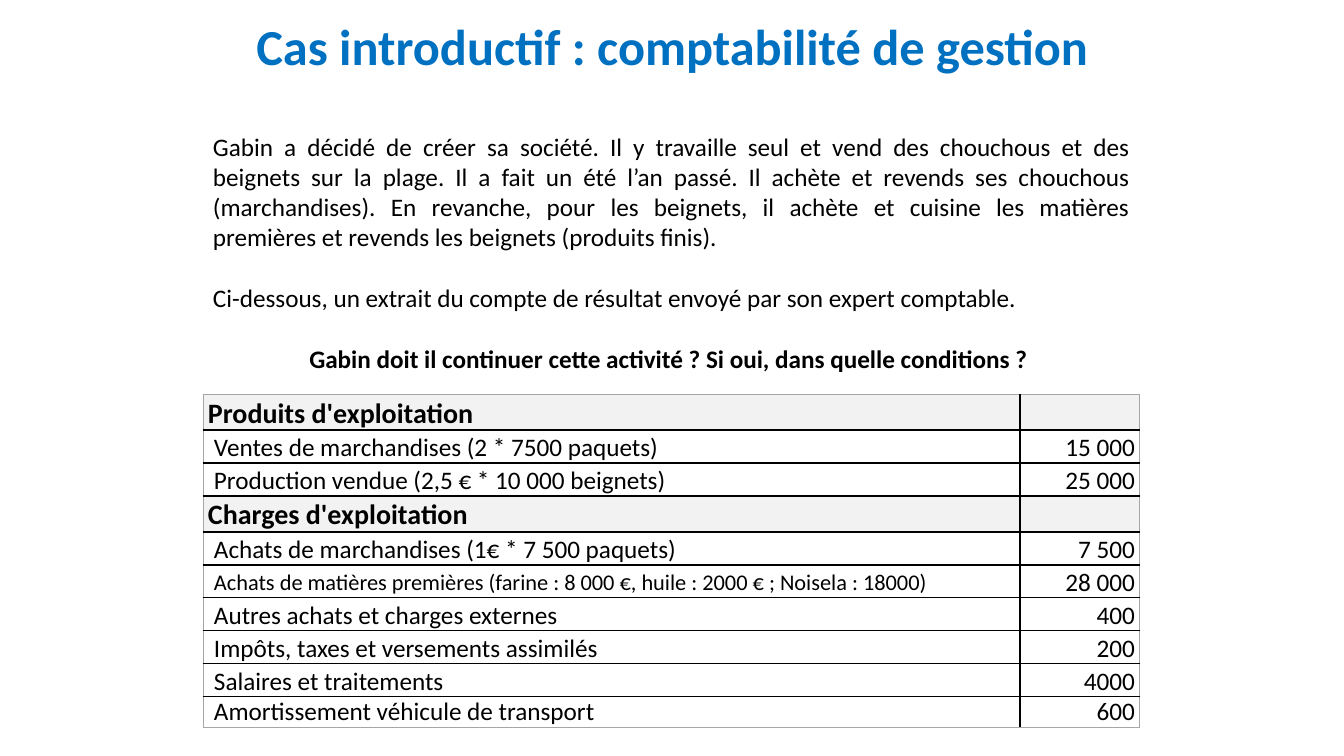
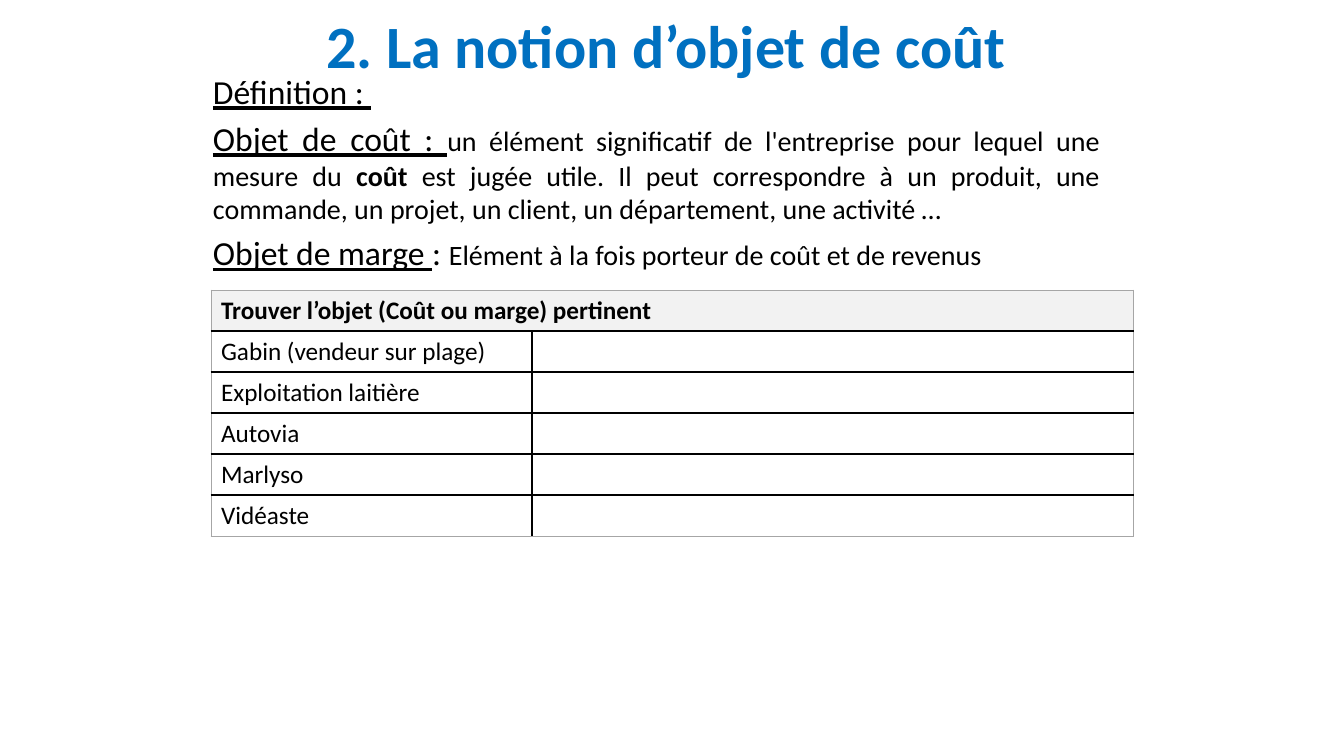
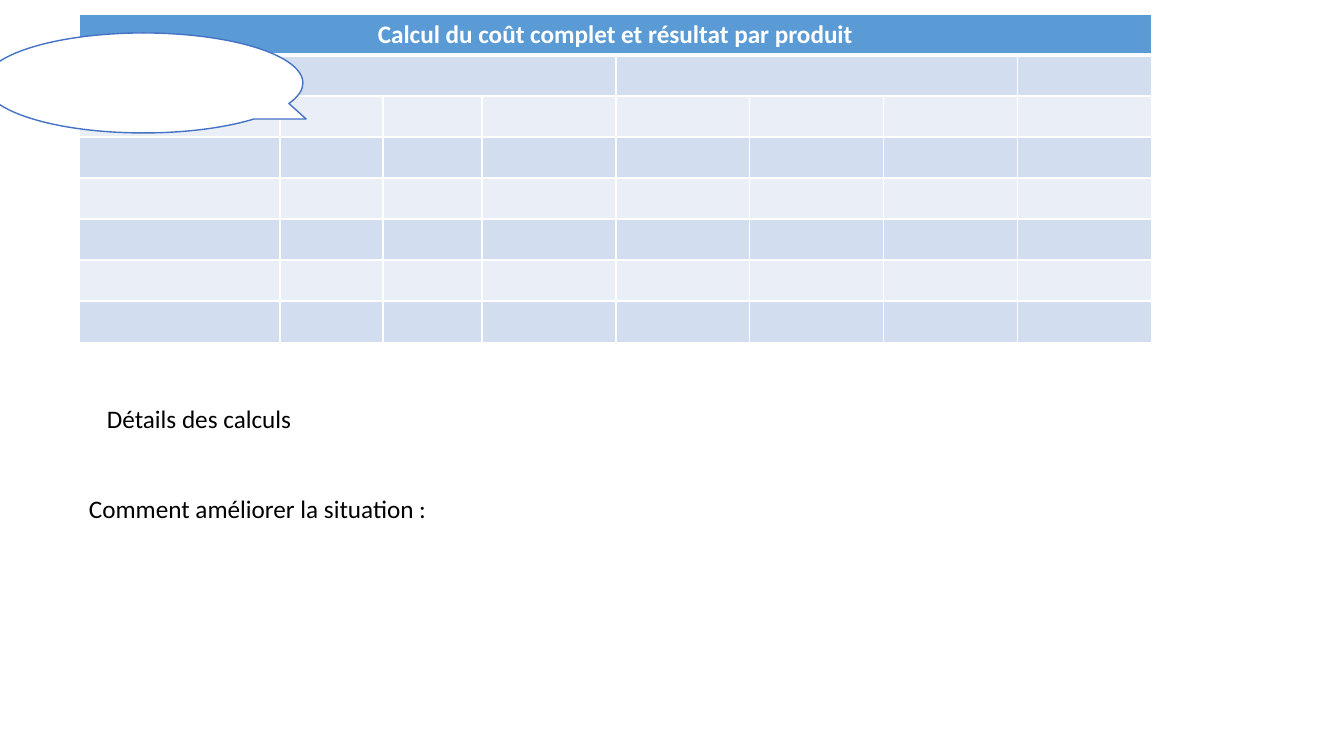
import pptx
import pptx.util
import pptx.dml.color
import pptx.enum.shapes
import pptx.enum.text
import pptx.oxml
import pptx.oxml.ns

RGB = pptx.dml.color.RGBColor
ALIGN = pptx.enum.text.PP_ALIGN
ANCHOR = pptx.enum.text.MSO_ANCHOR
Pt = pptx.util.Pt

# Shared look
FONT = "Calibri"
BLACK = RGB(0x00, 0x00, 0x00)
WHITE = RGB(0xFF, 0xFF, 0xFF)
TITLE_BLUE = RGB(0x00, 0x70, 0xC0)
HEAD_GREY = RGB(0xF2, 0xF2, 0xF2)
EDGE_GREY = RGB(0xA6, 0xA6, 0xA6)
HEAD_BLUE = RGB(0x5B, 0x9B, 0xD5)
BAND_DARK = RGB(0xD2, 0xDE, 0xEF)
BAND_LIGHT = RGB(0xEA, 0xEF, 0xF7)
CALLOUT_BLUE = RGB(0x44, 0x72, 0xC4)
SLIDE_W, SLIDE_H = 1344, 756
TITLE_BOX = (219, 0, 907, 90)
BODY_SIZE = 18

# Slide 1: introduction and income statement
INTRO_TITLE = ("Cas introductif : comptabilité de gestion", 36)
INTRO_BOX = (203, 126, 937, 285)
INTRO = [
    ([("Gabin a décidé de créer sa société. Il y travaille seul et vend des chouchous "
       "et des beignets sur la plage. Il a fait un été l’an passé. Il achète et revends "
       "ses chouchous (marchandises). En revanche, pour les beignets, il achète et "
       "cuisine les matières premières et revends les beignets (produits finis). ", {})],
     {"alignment": ALIGN.JUSTIFY}),
    ([("Ci-dessous, un extrait du compte de résultat envoyé par son expert comptable.",
       {})], {"space_before": Pt(22)}),
    ([("Gabin doit il continuer cette activité ? Si oui, dans quelle conditions ? ",
       {"bold": True})], {"alignment": ALIGN.CENTER, "space_before": Pt(22)}),
]
STATEMENT_AT = (203, 394)
STATEMENT_COLS = [817, 120]
STATEMENT_HEAD_H, STATEMENT_ROW_H, STATEMENT_LAST_H = 36, 33, 30
STATEMENT = [
    ("Produits d'exploitation", ""),
    ("Ventes de marchandises (2 * 7500 paquets)", "15 000"),
    ("Production vendue (2,5 € * 10 000 beignets)", "25 000"),
    ("Charges d'exploitation", ""),
    ("Achats de marchandises (1€ * 7 500 paquets)", "7 500"),
    ("Achats de matières premières (farine : 8 000 €, huile : 2000 € ; Noisela : 18000)",
     "28 000"),
    ("Autres achats et charges externes", "400"),
    ("Impôts, taxes et versements assimilés", "200"),
    ("Salaires et traitements", "4000"),
    ("Amortissement véhicule de transport", "600"),
]
LONG_LABEL = 80  # labels this long are set smaller

# Slide 2: cost object
OBJECT_TITLE = ("2. La notion d’objet de coût ", 42.9)
OBJECT_BOX = (203, 66, 907, 499)
TERM = {"size": Pt(24), "underline": True}
TEXT = {"size": Pt(20)}
OBJECT = [
    ([("Définition : ", TERM)], {}),
    ([("Objet de coût : ", TERM),
      ("un élément significatif de l'entreprise pour lequel une mesure du ", TEXT),
      ("coût", {**TEXT, "bold": True}),
      (" est jugée utile. Il peut correspondre à un produit, une commande, un projet, "
       "un client, un département, une activité … ", TEXT)],
     {"alignment": ALIGN.JUSTIFY, "space_before": Pt(4.8)}),
    ([("Objet de marge ", TERM), (": ", {"size": Pt(24)}),
      ("Elément à la fois porteur de coût et de revenus", TEXT)],
     {"space_before": Pt(4.8)}),
]
EXERCISE_AT = (211, 290)
EXERCISE_COLS = [321, 602]
EXERCISE = ["Trouver l’objet (Coût ou marge) pertinent", "Gabin (vendeur sur plage)",
            "Exploitation laitière", "Autovia", "Marlyso", "Vidéaste"]

# Slide 3: full cost grid
COST_TITLE = "Calcul du coût complet et résultat par produit"
COST_AT = (79, 14)
COST_COLS = [201, 103, 99] + [134] * 5
COST_ROWS = 8
COST_MERGES = [(0, 0, 7), (1, 1, 3), (1, 4, 6)]
CALLOUT_BOX = (-16, 33, 319, 100)
CALLOUT_POINT = (0.51, 0.36)
NOTES = [("Détails des calculs", (97, 398, 1023, 40)),
         ("Comment améliorer la situation :", (79, 488, 1076, 72))]
ROW_H = 41


def px(n):
    return round(n * 914400 / 100.8)


def apply(target, formats):
    for name, value in formats.items():
        setattr(target, name, value)


def fill_text(tf, paragraphs, **default):
    """Write paragraphs given as (runs, paragraph format)."""
    for i, (runs, formats) in enumerate(paragraphs):
        p = tf.paragraphs[0] if i == 0 else tf.add_paragraph()
        apply(p, formats)
        for text, run_formats in runs:
            r = p.add_run()
            r.text = text
            look = {"name": FONT, "size": Pt(BODY_SIZE), "color": BLACK,
                    **default, **run_formats}
            r.font.color.rgb = look.pop("color")
            apply(r.font, look)


def add_text(s, box, paragraphs, **default):
    tf = s.shapes.add_textbox(*map(px, box)).text_frame
    tf.word_wrap = True
    fill_text(tf, paragraphs, **default)
    return tf


def add_title(s, title):
    text, size = title
    tf = add_text(s, TITLE_BOX, [([(text, {})], {"alignment": ALIGN.CENTER})],
                  size=Pt(size), color=TITLE_BLUE, bold=True)
    apply(tf, {"vertical_anchor": ANCHOR.MIDDLE, "margin_left": 0, "margin_right": 0,
               "margin_top": 0, "margin_bottom": 0})


def set_border(cell, side, color, width):
    cell._tc.get_or_add_tcPr().append(pptx.oxml.parse_xml(
        f'<a:ln{side} {pptx.oxml.ns.nsdecls("a")} w="{Pt(width)}">'
        f'<a:solidFill><a:srgbClr val="{color}"/></a:solidFill></a:ln{side}>'))


def add_grid(s, at, cols, rows, fills, merges=(), inner=BLACK, outer=EDGE_GREY):
    """Add a table with one fill per row, inner lines and an outer frame."""
    table = s.shapes.add_table(len(rows), len(cols), px(at[0]), px(at[1]),
                               px(sum(cols)), px(sum(rows))).table
    apply(table, {"first_row": False, "horz_banding": False})
    for col, width in zip(table.columns, cols):
        col.width = px(width)
    for row, height in zip(table.rows, rows):
        row.height = px(height)
    for i, first, last in merges:
        table.cell(i, first).merge(table.cell(i, last))
    for i, fill in enumerate(fills):
        for j in range(len(cols)):
            cell = table.cell(i, j)
            if cell.is_spanned:
                continue
            end = j + (cell.span_width if cell.is_merge_origin else 1)
            at_edge = {"L": j == 0, "R": end == len(cols),
                       "T": i == 0, "B": i == len(rows) - 1}
            for side, is_edge in at_edge.items():
                set_border(cell, side, outer if is_edge else inner,
                           0.75 if is_edge else 1)
            cell.fill.solid()
            cell.fill.fore_color.rgb = fill
    return table


def build_intro(s):
    add_title(s, INTRO_TITLE)
    add_text(s, INTRO_BOX, INTRO)
    heads = [not amount for _, amount in STATEMENT]
    heights = [STATEMENT_HEAD_H if head else STATEMENT_ROW_H for head in heads]
    heights[-1] = STATEMENT_LAST_H
    table = add_grid(s, STATEMENT_AT, STATEMENT_COLS, heights,
                     [HEAD_GREY if head else WHITE for head in heads])
    for i, (row, head) in enumerate(zip(STATEMENT, heads)):
        spacing = 1.0 if i == len(STATEMENT) - 1 else 1.07
        for j, text in enumerate(row):
            cell = table.cell(i, j)
            amount = j == 1
            apply(cell, {"margin_left": px(5 if head or amount else 11),
                         "margin_right": px(5), "margin_top": 0, "margin_bottom": 0,
                         "vertical_anchor":
                             ANCHOR.BOTTOM if head or amount else ANCHOR.MIDDLE})
            size = 20 if head else 16 if len(text) >= LONG_LABEL else BODY_SIZE
            if text:
                fill_text(cell.text_frame, [([(text, {})], {
                    "alignment": ALIGN.RIGHT if amount else ALIGN.LEFT,
                    "line_spacing": spacing})], size=Pt(size), bold=head)


def build_object(s):
    add_title(s, OBJECT_TITLE)
    add_text(s, OBJECT_BOX, OBJECT)
    count = len(EXERCISE)
    table = add_grid(s, EXERCISE_AT, EXERCISE_COLS, [ROW_H] * count,
                     [HEAD_GREY] + [WHITE] * (count - 1), [(0, 0, 1)])
    for i, text in enumerate(EXERCISE):
        fill_text(table.cell(i, 0).text_frame, [([(text, {})], {})], bold=i == 0)


def build_cost(s):
    bands = [BAND_DARK if i % 2 else BAND_LIGHT for i in range(1, COST_ROWS)]
    table = add_grid(s, COST_AT, COST_COLS, [ROW_H] * COST_ROWS, [HEAD_BLUE] + bands,
                     COST_MERGES, inner=WHITE, outer=WHITE)
    head = table.cell(0, 0)
    head.vertical_anchor = ANCHOR.MIDDLE
    head._tc.tcPr.find(pptx.oxml.ns.qn("a:lnB")).set("w", str(Pt(3)))
    fill_text(head.text_frame, [([(COST_TITLE, {})], {"alignment": ALIGN.CENTER})],
              color=WHITE, bold=True)

    # Empty speech bubble over the grid
    sp = s.shapes.add_shape(pptx.enum.shapes.MSO_SHAPE.OVAL_CALLOUT,
                            *map(px, CALLOUT_BOX))
    sp.shadow.inherit = False
    for i, value in enumerate(CALLOUT_POINT):
        sp.adjustments[i] = value
    sp.fill.solid()
    sp.fill.fore_color.rgb = WHITE
    sp.line.color.rgb = CALLOUT_BLUE
    sp.line.width = Pt(1)

    for text, box in NOTES:
        add_text(s, box, [([(text, {})], {})])


def main():
    prs = pptx.Presentation()
    prs.slide_width, prs.slide_height = px(SLIDE_W), px(SLIDE_H)
    for build in (build_intro, build_object, build_cost):
        build(prs.slides.add_slide(prs.slide_layouts[6]))
    prs.save("out.pptx")


if __name__ == "__main__":
    main()
